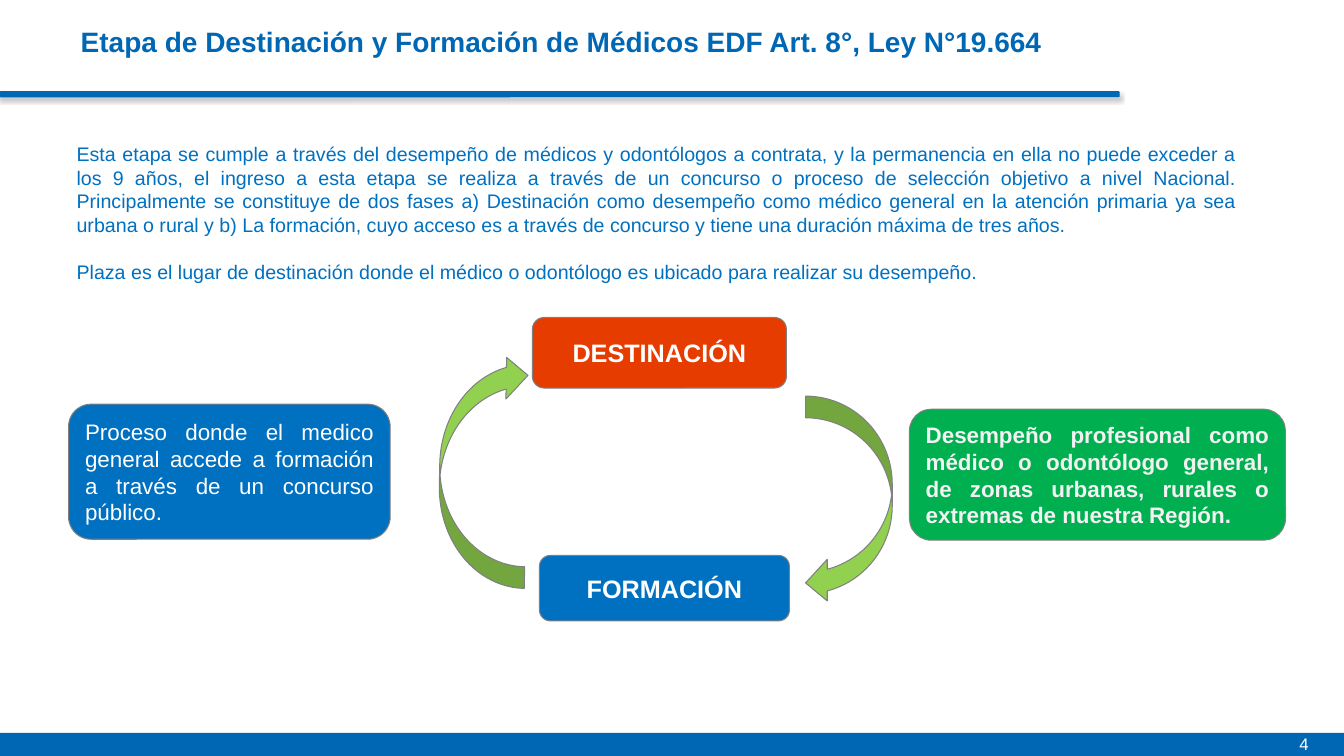
from dataclasses import dataclass

from lxml import etree
from pptx import Presentation
from pptx.dml.color import RGBColor
from pptx.enum.shapes import MSO_SHAPE
from pptx.enum.text import MSO_ANCHOR, PP_ALIGN
from pptx.oxml.ns import qn
from pptx.util import Emu, Pt

PX = 9144  # EMU per px, 100 px to the inch
FONT = "Arial"
TITLE_ONLY = 5

RECT = MSO_SHAPE.RECTANGLE
ROUNDED = MSO_SHAPE.ROUNDED_RECTANGLE
CURVED_ARROW = MSO_SHAPE.CURVED_LEFT_ARROW
TOP, MIDDLE = MSO_ANCHOR.TOP, MSO_ANCHOR.MIDDLE
LEFT, CENTER, JUSTIFY = PP_ALIGN.LEFT, PP_ALIGN.CENTER, PP_ALIGN.JUSTIFY

WHITE = RGBColor(0xFF, 0xFF, 0xFF)
PALE = RGBColor(0xF2, 0xF2, 0xF2)
GRAY = RGBColor(0x80, 0x80, 0x80)
BRAND_BLUE = RGBColor(0x00, 0x67, 0xB4)
BLUE = RGBColor(0x00, 0x70, 0xC0)
GREEN = RGBColor(0x00, 0xB0, 0x50)
LIME = RGBColor(0x92, 0xD0, 0x50)
ORANGE = RGBColor(0xE6, 0x3C, 0x00)


@dataclass(frozen=True)
class Area:
    left: int
    top: int
    width: int
    height: int


@dataclass(frozen=True)
class Style:
    size: int
    color: RGBColor
    bold: bool = False
    align: PP_ALIGN = LEFT
    gap: int = 0  # points before every paragraph but the first


@dataclass(frozen=True)
class Card:
    area: Area
    fill: RGBColor
    paragraphs: tuple[str, ...]
    style: Style


@dataclass(frozen=True)
class CycleArrow:
    area: Area
    rotation: int


TITLE = "Etapa de Destinación y Formación de Médicos EDF Art. 8°, Ley N°19.664"
INTRO = (
    "Esta etapa se cumple a través del desempeño de médicos y odontólogos a contrata, "
    "y la permanencia en ella no puede exceder a los 9 años, el ingreso a esta etapa "
    "se realiza a través de un concurso o proceso de selección objetivo a nivel Nacional. "
    "Principalmente se constituye de dos fases a) Destinación como desempeño como médico "
    "general en la atención primaria ya sea urbana o rural y b) La formación, cuyo acceso "
    "es a través de concurso y tiene una duración máxima de tres años.",
    "Plaza es el lugar de destinación donde el médico o odontólogo es ubicado para "
    "realizar su desempeño.",
)
STAGE = Style(18, WHITE, bold=True, align=CENTER)

ARROWS = (
    CycleArrow(Area(799, 393, 86, 206), 0),
    CycleArrow(Area(436, 351, 86, 232), 181),
)
CARDS = (
    Card(Area(535, 551, 248, 65), BLUE, ("FORMACIÓN",), STAGE),
    Card(Area(902, 406, 373, 130), GREEN,
         ("Desempeño profesional como médico o odontólogo general, de zonas urbanas, "
          "rurales o extremas de nuestra Región.",),
         Style(16, PALE, bold=True, align=JUSTIFY)),
    Card(Area(68, 401, 319, 134), BLUE,
         ("Proceso donde el medico general accede a formación a través de un concurso "
          "público.",),
         Style(16, WHITE, align=JUSTIFY)),
    Card(Area(528, 315, 252, 70), ORANGE, ("DESTINACIÓN",), STAGE),
)


def place(area: Area) -> tuple[Emu, ...]:
    return tuple(Emu(n * PX) for n in (area.left, area.top, area.width, area.height))


def write(frame, paragraphs: tuple[str, ...], style: Style, anchor=TOP, inset=None) -> None:
    frame.word_wrap = True
    frame.vertical_anchor = anchor
    if inset is not None:
        frame.margin_left = frame.margin_right = Emu(inset * PX)
        frame.margin_top = frame.margin_bottom = Emu(inset * PX)
    for index, text in enumerate(paragraphs):
        para = frame.add_paragraph() if index else frame.paragraphs[0]
        para.alignment = style.align
        if index:
            para.space_before = Pt(style.gap)
        span = para.add_run()
        span.text = text
        span.font.name = FONT
        span.font.size = Pt(style.size)
        span.font.bold = style.bold
        span.font.color.rgb = style.color


def add_box(page, kind, area: Area, fill: RGBColor, line: RGBColor | None = GRAY):
    box = page.shapes.add_shape(kind, *place(area))
    box.shadow.inherit = False
    box.fill.solid()
    box.fill.fore_color.rgb = fill
    if line is None:
        box.line.fill.background()
    else:
        box.line.color.rgb = line
        box.line.width = Pt(0.75)
    return box


def add_soft_shadow(box) -> None:
    effects = box._element.spPr.find(qn("a:effectLst"))
    shadow = etree.SubElement(effects, qn("a:outerShdw"), blurRad="40000", dist="23000",
                              dir="5400000", rotWithShape="0")
    color = etree.SubElement(shadow, qn("a:srgbClr"), val="000000")
    etree.SubElement(color, qn("a:alpha"), val="35000")


def add_frame(page) -> None:
    # Header rule and footer band
    rule = add_box(page, ROUNDED, Area(0, 91, 1110, 5), BRAND_BLUE, BRAND_BLUE)
    rule.adjustments[0] = 0.12
    add_soft_shadow(rule)
    add_box(page, RECT, Area(0, 727, 1333, 23), BRAND_BLUE, None)

    # Page number
    number = page.shapes.add_textbox(*place(Area(1279, 723, 54, 40 - 13)))
    write(number.text_frame, ("4",), Style(12, WHITE))

    # Title
    title = page.shapes.title
    title.left, title.top, title.width, title.height = place(Area(80, 24, 1060, 34))
    write(title.text_frame, (TITLE,), Style(20, BRAND_BLUE, bold=True), inset=0)


def main() -> None:
    deck = Presentation()
    deck.slide_width, deck.slide_height = Emu(1333 * PX), Emu(750 * PX)
    page = deck.slides.add_slide(deck.slide_layouts[TITLE_ONLY])
    add_frame(page)

    # Introduction
    intro = add_box(page, RECT, Area(68, 133, 1167, 161), WHITE, WHITE)
    write(intro.text_frame, INTRO, Style(14, BLUE, align=JUSTIFY, gap=17), inset=8)

    # Cycle between the two stages
    for item in ARROWS:
        arrow = add_box(page, CURVED_ARROW, item.area, LIME)
        arrow.rotation = item.rotation
        for index, value in enumerate((0.25, 0.48, 0.25)):
            arrow.adjustments[index] = value

    # Stages and their descriptions
    for card in CARDS:
        box = add_box(page, ROUNDED, card.area, card.fill)
        write(box.text_frame, card.paragraphs, card.style, MIDDLE)

    deck.save("out.pptx")


if __name__ == "__main__":
    main()
